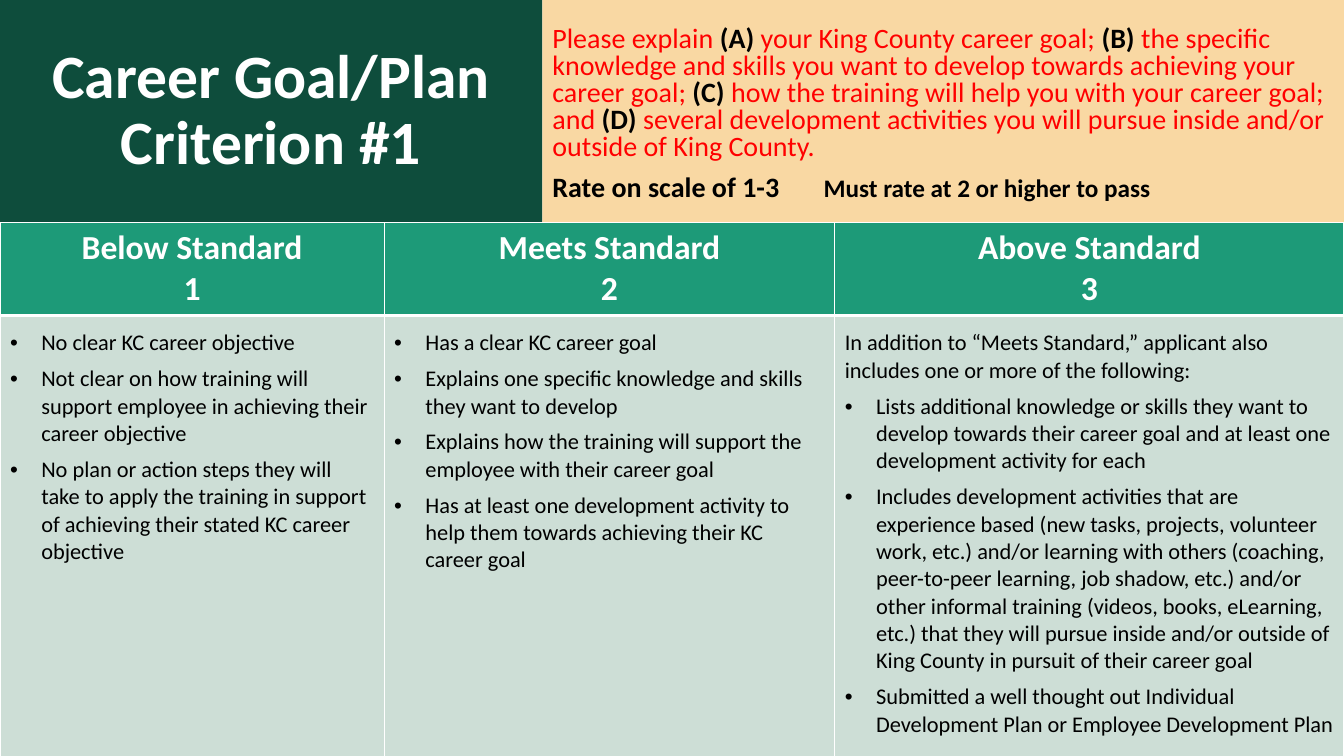
from pptx import Presentation
from pptx.dml.color import RGBColor
from pptx.enum.shapes import MSO_SHAPE
from pptx.enum.text import MSO_ANCHOR, PP_ALIGN
from pptx.oxml.ns import qn
from pptx.util import Inches, Pt
from lxml import etree

RECTANGLE = MSO_SHAPE.RECTANGLE
LEFT, CENTER = PP_ALIGN.LEFT, PP_ALIGN.CENTER
TOP, MIDDLE = MSO_ANCHOR.TOP, MSO_ANCHOR.MIDDLE
COLORS = {
    "title": "0E4D3C", "prompt": "F9D8A3", "header": "1D9A78", "body": "CDDED6",
    "white": "FFFFFF", "black": "000000", "red": "FF0000",
}

# Grid: two bands across the slide, three rating columns
WIDTH, HEIGHT = 13.33, 7.5
BAND_HEIGHT, TITLE_WIDTH = 2.21, 5.38
COLUMNS = [3.81, 4.47, WIDTH - 3.81 - 4.47]
ROWS = [0.92, 4.52]
INDENT = 0.31

PROMPT = [
    ("Please explain ", "red"), ("(A) ", "black"),
    ("your King County career goal; ", "red"), ("(B) ", "black"),
    ("the specific knowledge and skills you want to develop towards achieving "
     "your career goal; ", "red"), ("(C)", "black"),
    (" how the training will help you with your career goal; and ", "red"),
    ("(D) ", "black"),
    ("several development activities you will pursue inside and/or outside of "
     "King County.", "red"),
]
# Each standard: name, introduction, bullets
STANDARDS = [
    ("Below Standard", None, [
        "No clear KC career objective",
        "Not clear on how training will support employee in achieving their career objective",
        "No plan or action steps they will take to apply the training in support of "
        "achieving their stated KC career objective",
    ]),
    ("Meets Standard", None, [
        "Has a clear KC career goal",
        "Explains one specific knowledge and skills they want to develop",
        "Explains how the training will support the employee with their career goal",
        "Has at least one development activity to help them towards achieving their "
        "KC career goal",
    ]),
    ("Above Standard",
     "In addition to “Meets Standard,” applicant also includes one or more of the following:", [
         "Lists additional knowledge or skills they want to develop towards their career "
         "goal and at least one development activity for each",
         "Includes development activities that are experience based (new tasks, projects, "
         "volunteer work, etc.) and/or learning with others (coaching, peer-to-peer "
         "learning, job shadow, etc.) and/or other informal training (videos, books, "
         "eLearning, etc.) that they will pursue inside and/or outside of King County in "
         "pursuit of their career goal",
         "Submitted a well thought out Individual Development Plan or Employee "
         "Development Plan",
     ]),
]


def add_run(paragraph, text, size, color, bold):
    run = paragraph.add_run()
    run.text = text
    for name, value in {"name": "Calibri", "size": Pt(size), "bold": bold}.items():
        setattr(run.font, name, value)
    run.font.color.rgb = RGBColor.from_string(COLORS[color])


def format_cell(cell, fill, borders):
    properties = cell._tc.get_or_add_tcPr()
    for side, points in borders.items():
        line = etree.SubElement(properties, qn(f"a:ln{side}"), w=str(Pt(points)))
        solid = etree.SubElement(line, qn("a:solidFill"))
        etree.SubElement(solid, qn("a:srgbClr"), val=COLORS["white"])
    cell.fill.solid()
    cell.fill.fore_color.rgb = RGBColor.from_string(COLORS[fill])


presentation = Presentation()
presentation.slide_width = Inches(WIDTH)
presentation.slide_height = Inches(HEIGHT)
slide = presentation.slides.add_slide(presentation.slide_layouts[6])

# Top band: title and prompt panels
frames = {}
for name, left, width, anchor, margin in [
    ("title", 0, TITLE_WIDTH, MIDDLE, 0.05),
    ("prompt", TITLE_WIDTH, WIDTH - TITLE_WIDTH, TOP, 0.27),
]:
    shape = slide.shapes.add_shape(
        RECTANGLE, Inches(left), 0, Inches(width), Inches(BAND_HEIGHT))
    shape.shadow.inherit = False
    shape.fill.solid()
    shape.fill.fore_color.rgb = RGBColor.from_string(COLORS[name])
    shape.line.fill.background()
    frames[name] = shape.text_frame
    for key, value in {"word_wrap": True, "vertical_anchor": anchor,
                       "margin_top": Inches(margin)}.items():
        setattr(shape.text_frame, key, value)

# Title text
paragraph = frames["title"].paragraphs[0]
paragraph.alignment, paragraph.line_spacing = CENTER, 0.9
add_run(paragraph, "Career Goal/Plan", 44, "white", True)
paragraph.add_line_break()
add_run(paragraph, "Criterion #1", 44, "white", True)

# Prompt text, then the rating rule with a tab stop
question = frames["prompt"].paragraphs[0]
rule = frames["prompt"].add_paragraph()
for paragraph in (question, rule):
    paragraph.alignment, paragraph.line_spacing = LEFT, 0.8
rule.space_before = Pt(10)
tabs = etree.SubElement(rule._p.get_or_add_pPr(), qn("a:tabLst"))
etree.SubElement(tabs, qn("a:tab"), pos=str(Inches(2.69)), algn="l")
for text, color in PROMPT:
    add_run(question, text, 20, color, color == "black")
add_run(rule, "Rate on scale of 1-3\t", 20, "black", True)
add_run(rule, "Must rate at 2 or higher to pass", 18, "black", True)

# Rating table
table = slide.shapes.add_table(
    len(ROWS), len(COLUMNS), 0, Inches(BAND_HEIGHT),
    Inches(WIDTH), Inches(sum(ROWS))).table
table.horz_banding = False
for row, height in zip(table.rows, ROWS):
    row.height = Inches(height)

for index, (standard, introduction, bullets) in enumerate(STANDARDS):
    table.columns[index].width = Inches(COLUMNS[index])

    # Header cell: name over score
    header = table.cell(0, index)
    format_cell(header, "header", {"L": 1, "R": 1, "T": 1, "B": 3})
    frame = header.text_frame
    for paragraph, text in [(frame.paragraphs[0], standard),
                            (frame.add_paragraph(), str(index + 1))]:
        paragraph.alignment = CENTER
        add_run(paragraph, text, 24, "white", True)

    # Body cell: optional introduction, then bullets
    body = table.cell(1, index)
    format_cell(body, "body", {"L": 1, "R": 1, "T": 3, "B": 1})
    body.margin_top = Inches(0.14)
    entries = [(text, True) for text in bullets]
    if introduction:
        entries.insert(0, (introduction, False))
    for position, (text, bulleted) in enumerate(entries):
        if position == 0:
            paragraph = body.text_frame.paragraphs[0]
        else:
            paragraph = body.text_frame.add_paragraph()
            paragraph.space_before = Pt(6)
        if bulleted:
            properties = paragraph._p.get_or_add_pPr()
            properties.set("marL", str(Inches(INDENT)))
            properties.set("indent", str(-Inches(INDENT)))
            etree.SubElement(properties, qn("a:buFont"), typeface="Arial")
            etree.SubElement(properties, qn("a:buChar"), char="•")
        add_run(paragraph, text, 16, "black", False)

presentation.save("out.pptx")
